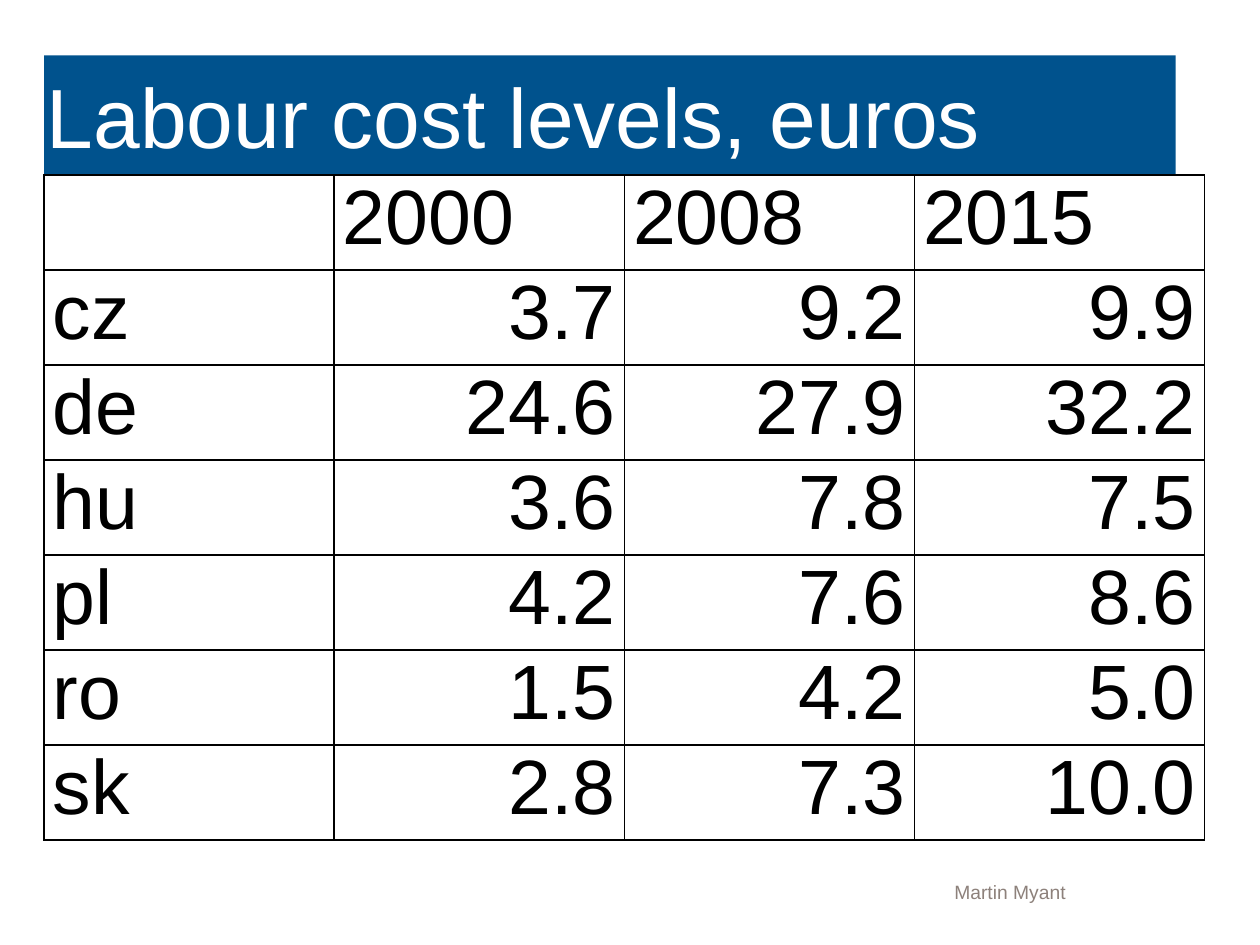
import pptx
import pptx.util
import pptx.dml.color
import pptx.enum.shapes
import pptx.enum.text
import lxml.etree

Inches = pptx.util.Inches
Align = pptx.enum.text.PP_ALIGN
Anchor = pptx.enum.text.MSO_ANCHOR


def color(code):
    return pptx.dml.color.RGBColor.from_string(code)


def style(frame, size, code, align):
    para = frame.paragraphs[0]
    para.alignment = align
    for run in para.runs:
        run.font.name = "Arial"
        run.font.size = pptx.util.Pt(size)
        run.font.color.rgb = color(code)


deck = pptx.Presentation()
deck.slide_width, deck.slide_height = Inches(10), Inches(7.5)
slide = deck.slides.add_slide(deck.slide_layouts[6])
left = Inches(0.35)

# Title band
band = slide.shapes.add_shape(
    pptx.enum.shapes.MSO_SHAPE.RECTANGLE,
    left, Inches(0.44), Inches(8.98), Inches(0.94))
band.shadow.inherit = False
band.fill.solid()
band.fill.fore_color.rgb = color("00528D")
band.line.fill.background()
frame = band.text_frame
frame.margin_left = frame.margin_right = Inches(0.02)
frame.margin_top = frame.margin_bottom = 0
frame.vertical_anchor = Anchor.MIDDLE
frame.text = "Labour cost levels, euros"
style(frame, 48, "FFFFFF", Align.LEFT)

# Cost table
rows = [
    ("", "2000", "2008", "2015"),
    ("cz", "3.7", "9.2", "9.9"),
    ("de", "24.6", "27.9", "32.2"),
    ("hu", "3.6", "7.8", "7.5"),
    ("pl", "4.2", "7.6", "8.6"),
    ("ro", "1.5", "4.2", "5.0"),
    ("sk", "2.8", "7.3", "10.0"),
]
table = slide.shapes.add_table(
    len(rows), len(rows[0]), left, Inches(1.39), Inches(9.21), Inches(5.28)).table
table.first_row = table.horz_banding = False
ns = "http://schemas.openxmlformats.org/drawingml/2006/main"
for r, row in enumerate(rows):
    for c, text in enumerate(row):
        cell = table.cell(r, c)
        cell.margin_left = cell.margin_right = Inches(0.07)
        cell.margin_top = cell.margin_bottom = 0
        cell.text_frame.text = text
        style(cell.text_frame, 44, "000000",
              Align.RIGHT if r and c else Align.LEFT)
        # Borders come before the fill in the cell properties
        props = cell._tc.get_or_add_tcPr()
        for side in ("lnL", "lnR", "lnT", "lnB"):
            edge = lxml.etree.SubElement(props, f"{{{ns}}}{side}", w="12700")
            fill = lxml.etree.SubElement(edge, f"{{{ns}}}solidFill")
            lxml.etree.SubElement(fill, f"{{{ns}}}srgbClr", val="000000")
        cell.fill.solid()
        cell.fill.fore_color.rgb = color("FFFFFF")

# Footer
foot = slide.shapes.add_textbox(
    Inches(3.5), Inches(6.82), Inches(4.96), Inches(0.35)).text_frame
foot.word_wrap = True
foot.margin_left = foot.margin_right = foot.margin_top = foot.margin_bottom = 0
foot.vertical_anchor = Anchor.BOTTOM
foot.text = "Martin Myant"
style(foot, 11, "8D817B", Align.RIGHT)

deck.save("out.pptx")
